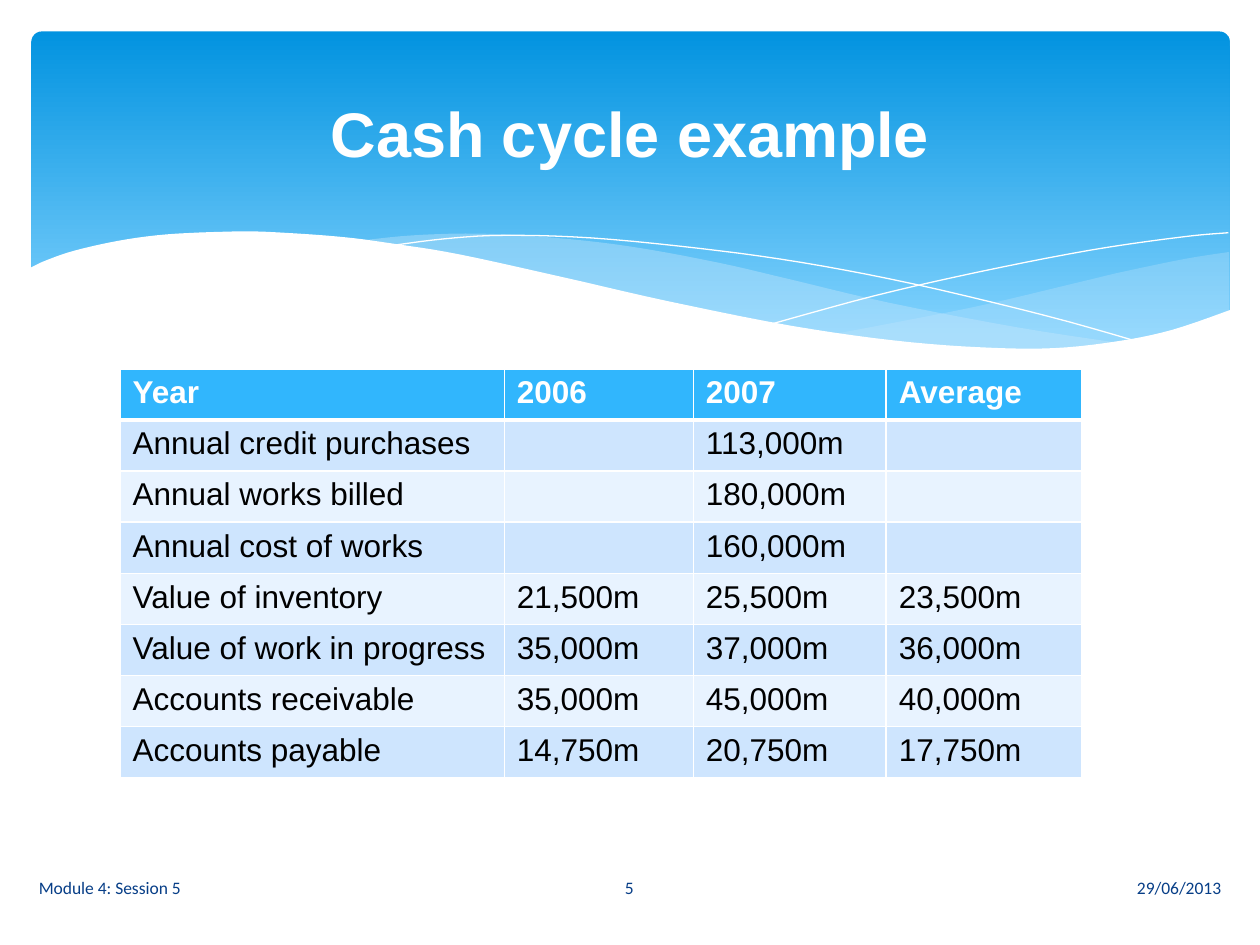
"""Build the cash cycle example slide: a wave banner, a title, a table and a footer."""
from lxml import etree
from pptx import Presentation
from pptx import util as u
from pptx.dml.color import RGBColor
from pptx.enum import shapes, text
from pptx.oxml.ns import qn

COLOURS = {
    "white": "FFFFFF", "black": "000000", "sky": "0293E0", "pale_sky": "83D3FE",
    "ripple": "C6E7FC", "header": "31B6FD", "odd_row": "CEE5FE",
    "even_row": "E8F3FF", "footer": "073E87",
}
TITLE = "Cash cycle example"
ROWS = [
    ("Year", "2006", "2007", "Average"),
    ("Annual credit purchases", "", "113,000m", ""),
    ("Annual works billed", "", "180,000m", ""),
    ("Annual cost of works", "", "160,000m", ""),
    ("Value of inventory", "21,500m", "25,500m", "23,500m"),
    ("Value of work in progress", "35,000m", "37,000m", "36,000m"),
    ("Accounts receivable", "35,000m", "45,000m", "40,000m"),
    ("Accounts payable", "14,750m", "20,750m", "17,750m"),
]
COLUMN_WIDTHS = (219.6, 108, 110.2, 111.6)
ROW_HEIGHT = 29.2
FOOTER = [
    ("29/06/2013", 406.8, 298, text.PP_ALIGN.RIGHT),
    ("Module 4: Session 5", 15.1, 298, text.PP_ALIGN.LEFT),
    ("5", 313.9, 91.4, text.PP_ALIGN.CENTER),
]
RIPPLES = [
    (29, [(702.5, 144), (677, 148), (641, 155.5), (620, 160.5), (561, 174.5), (508, 185), (476, 191)],
     [(476, 191), (518, 196), (562, 199.5), (600, 200), (640, 198), (673, 192), (702.5, 178)]),
    (40, [(643, 196.5), (581, 187), (508, 173), (453, 160), (410, 150), (361, 141), (318, 136),
          (274, 133.5), (236, 134.5), (206, 137.5)],
     [(206, 137.5), (261, 146), (323, 160), (408, 178.5), (468, 190), (530, 198), (590, 200),
      (643, 196.5)]),
]
THREADS = [
    [(222.5, 140.5), (254, 136.5), (288, 134.5), (338, 136), (400, 142), (458, 150),
     (523, 162.5), (598, 180.5), (653, 196)],
    [(441.5, 185), (500, 169), (559, 155.5), (623, 143), (675, 135.5), (702, 133)],
]
WAVE = [
    (703.5, 177), (670, 188.5), (639, 195), (602, 199), (560, 198.5), (510, 194.5),
    (451, 186), (381, 172), (322, 158.5), (263, 145.5), (227.5, 139.7), (195, 135.4),
    (152, 132.5), (127, 132.5), (95, 134), (68.4, 137.5), (42.5, 143.3), (26, 149), (16.5, 153.5),
]
WAVE_BASE = [(16.5, 237), (703.5, 237)]


def colour(name):
    return RGBColor.from_string(COLOURS[name])


def smooth(knots, steps=5):
    """Return points on a Catmull-Rom curve through the knots."""
    padded = [knots[0], *knots, knots[-1]]
    points = [knots[0]]
    for a, b, c, d in zip(padded, padded[1:], padded[2:], padded[3:]):
        for step in range(1, steps + 1):
            t = step / steps
            points.append(tuple(
                (2 * q + (r - p) * t + (2 * p - 5 * q + 4 * r - s) * t ** 2
                 + (3 * q - p - 3 * r + s) * t ** 3) / 2
                for p, q, r, s in zip(a, b, c, d)))
    return points


def add_outline(page, points, fill=None, opacity=100):
    """Draw a filled closed shape, or a white open hairline when there is no fill."""
    corners = [(u.Pt(x), u.Pt(y)) for x, y in points]
    builder = page.shapes.build_freeform(*corners[0])
    builder.add_line_segments(corners[1:], close=fill is not None)
    shape = builder.convert_to_shape()
    shape.shadow.inherit = False
    if fill is None:
        shape.fill.background()
        shape.line.color.rgb = colour("white")
        shape.line.width = u.Pt(0)
        return
    shape.fill.solid()
    shape.fill.fore_color.rgb = colour(fill)
    shape.line.fill.background()
    if opacity < 100:
        tint = shape._element.spPr.find(qn("a:solidFill"))[0]
        etree.SubElement(tint, qn("a:alpha"), val=str(opacity * 1000))


def add_banner(page):
    banner = page.shapes.add_shape(
        shapes.MSO_SHAPE.ROUNDED_RECTANGLE, u.Pt(18), u.Pt(18), u.Pt(684.7), u.Pt(194.4))
    banner.adjustments[0] = 0.03
    banner.shadow.inherit = False
    banner.line.fill.background()
    banner.fill.gradient()
    banner.fill.gradient_angle = 270
    for stop, name, position in zip(banner.fill.gradient_stops, ("sky", "pale_sky"), (0, 0.9)):
        stop.color.rgb = colour(name)
        stop.position = position
    for opacity, upper, lower in RIPPLES:
        add_outline(page, smooth(upper) + smooth(lower), "ripple", opacity)
    for thread in THREADS:
        add_outline(page, smooth(thread))
    add_outline(page, smooth(WAVE) + WAVE_BASE, "white")


def style(para, size, font, name, bold=False):
    para.font.size = u.Pt(size)
    para.font.name = font
    para.font.bold = bold
    para.font.color.rgb = colour(name)


def set_borders(cell, top, bottom):
    properties = cell._tc.get_or_add_tcPr()
    for index, (side, width) in enumerate(zip("LRTB", (1, 1, top, bottom))):
        line = etree.Element(qn(f"a:ln{side}"), w=str(u.Pt(width)))
        fill = etree.SubElement(line, qn("a:solidFill"))
        etree.SubElement(fill, qn("a:srgbClr"), val=COLOURS["white"])
        properties.insert(index, line)


def add_cash_table(page):
    table = page.shapes.add_table(
        len(ROWS), len(COLUMN_WIDTHS), u.Pt(68.6), u.Pt(210.8),
        u.Pt(sum(COLUMN_WIDTHS)), u.Pt(ROW_HEIGHT * len(ROWS))).table
    for column, width in zip(table.columns, COLUMN_WIDTHS):
        column.width = u.Pt(width)
    for r, values in enumerate(ROWS):
        table.rows[r].height = u.Pt(ROW_HEIGHT)
        is_header = r == 0
        fill = "header" if is_header else "odd_row" if r % 2 else "even_row"
        for c, value in enumerate(values):
            cell = table.cell(r, c)
            cell.text = value
            cell.fill.solid()
            cell.fill.fore_color.rgb = colour(fill)
            style(cell.text_frame.paragraphs[0], 18, "Arial",
                  "white" if is_header else "black", is_header)
            set_borders(cell, 3 if r == 1 else 1, 3 if is_header else 1)


def add_footer(page):
    for words, left, width, align in FOOTER:
        box = page.shapes.add_textbox(u.Pt(left), u.Pt(492.5), u.Pt(width), u.Pt(28.8))
        frame = box.text_frame
        frame.word_wrap = True
        frame.vertical_anchor = text.MSO_ANCHOR.MIDDLE
        para = frame.paragraphs[0]
        para.text = words
        para.alignment = align
        style(para, 10, "Calibri", "footer")


def add_title(page):
    title = page.shapes.title
    title.left, title.top, title.width, title.height = map(u.Pt, (36, 26.6, 648, 98.6))
    title.text_frame.text = TITLE
    title.text_frame.vertical_anchor = text.MSO_ANCHOR.MIDDLE
    para = title.text_frame.paragraphs[0]
    para.alignment = text.PP_ALIGN.CENTER
    style(para, 36, "Arial", "white", True)
    page.shapes._spTree.append(title._element)


def main():
    deck = Presentation()
    deck.slide_width, deck.slide_height = u.Pt(720), u.Pt(540)
    page = deck.slides.add_slide(deck.slide_layouts.get_by_name("Title Only"))
    add_banner(page)
    add_cash_table(page)
    add_footer(page)
    add_title(page)
    deck.save("out.pptx")


if __name__ == "__main__":
    main()
